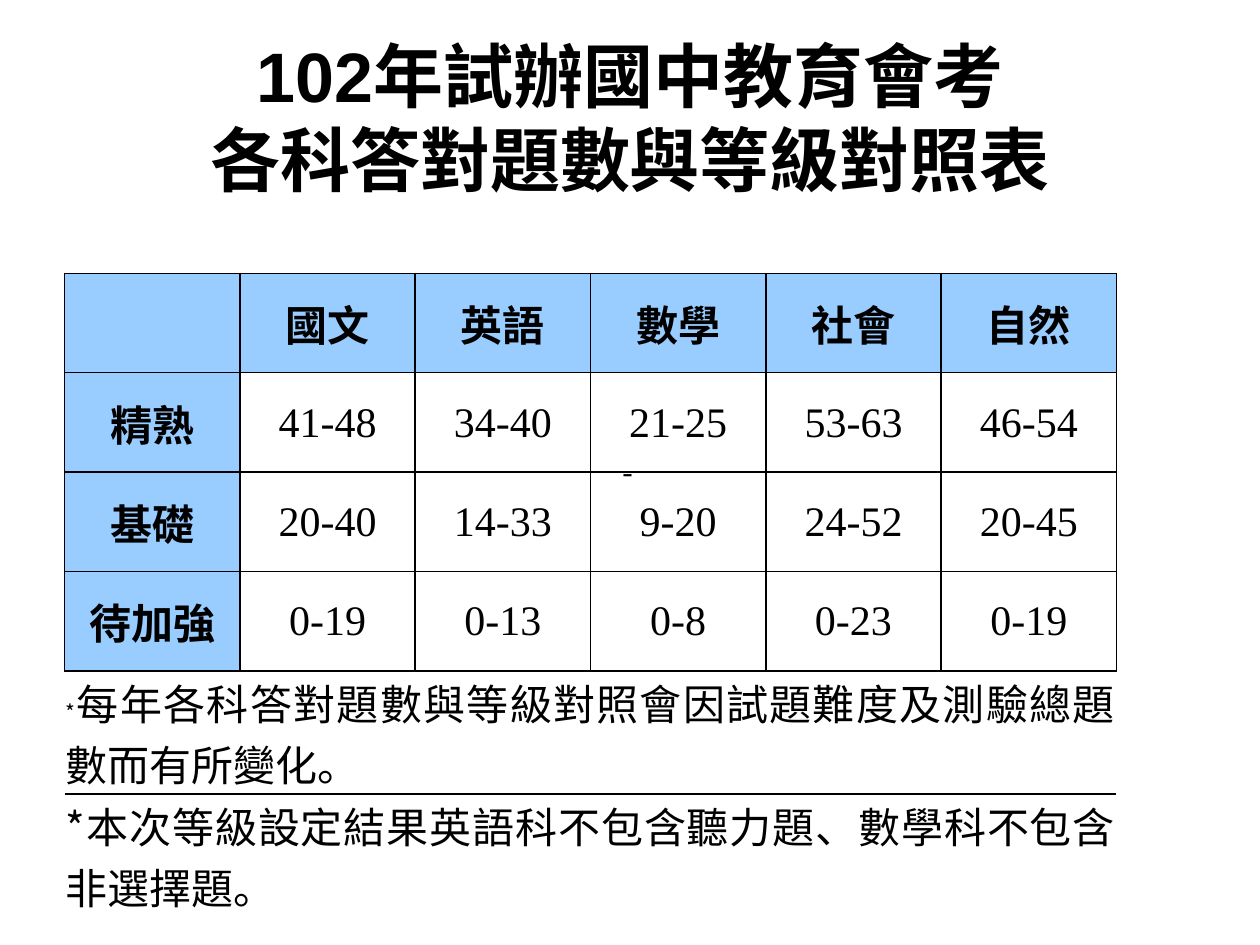
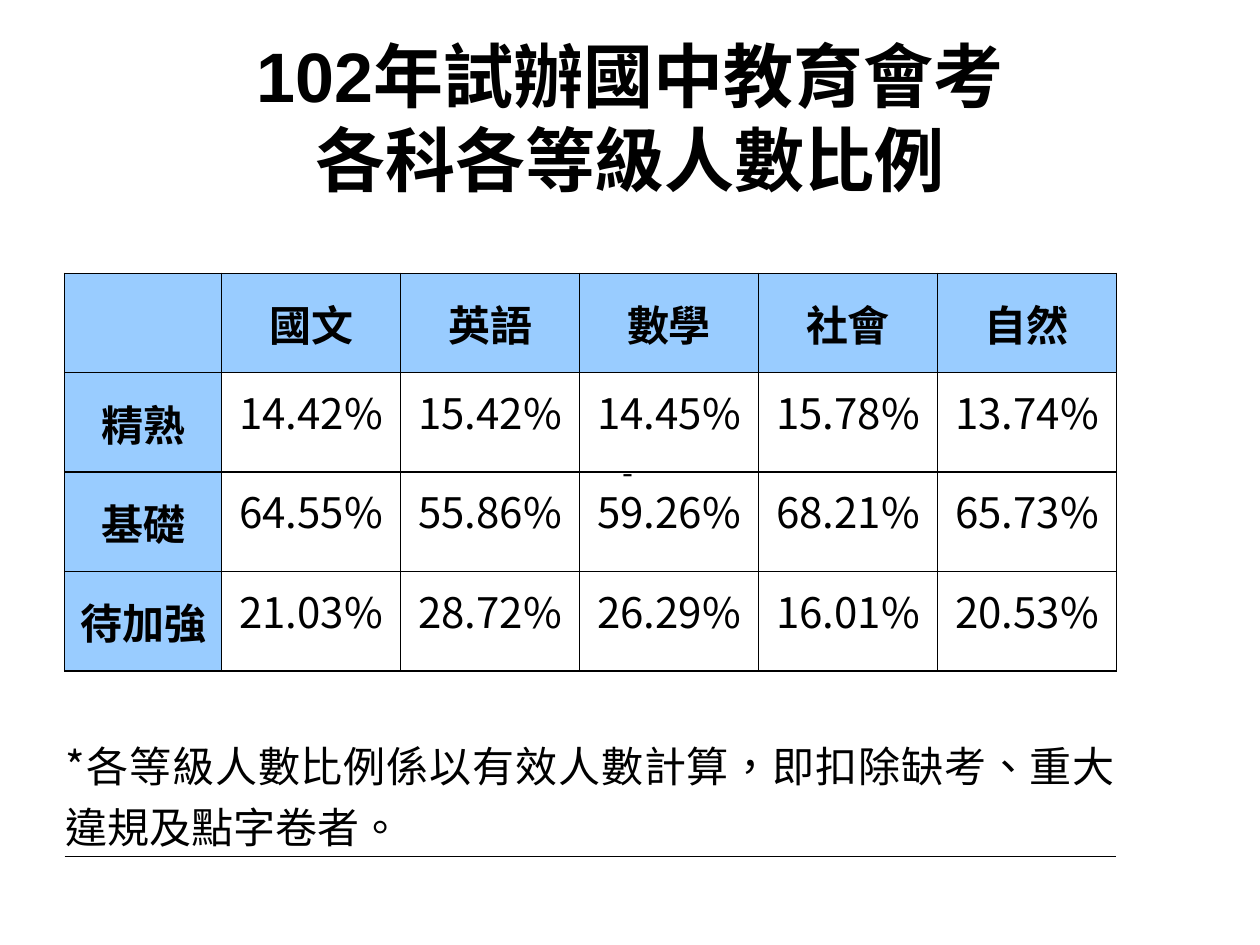
"""Builds two slides with the grade tables of the 102 trial exam."""
from dataclasses import dataclass

from lxml.etree import SubElement
from pptx import Presentation
from pptx.dml.color import RGBColor
from pptx.enum.lang import MSO_LANGUAGE_ID
from pptx.enum.text import MSO_ANCHOR, MSO_AUTO_SIZE, PP_ALIGN
from pptx.oxml.ns import qn
from pptx.util import Pt


@dataclass(frozen=True)
class Theme:
    ink: RGBColor = RGBColor(0x00, 0x00, 0x00)
    paper: RGBColor = RGBColor(0xFF, 0xFF, 0xFF)
    header: RGBColor = RGBColor(0x99, 0xCC, 0xFF)
    title_font: str = "Arial"
    text_font: str = "Noto Sans CJK SC"
    number_font: str = "Times New Roman"
    title_size: int = 40
    table_size: int = 24
    dash_size: int = 18
    star_size: int = 12
    border: int = 1
    plain_table: str = "{2D5ABB26-0587-4C30-8999-92F81FD0307C}"


SUBJECTS = ["", "國文", "英語", "數學", "社會", "自然"]
LEVELS = ["精熟", "基礎", "待加強"]
TITLE_START = "102年試辦國中教育會考"
TRADITIONAL = MSO_LANGUAGE_ID.TRADITIONAL_CHINESE
SIMPLIFIED = MSO_LANGUAGE_ID.SIMPLIFIED_CHINESE
BAND_HEIGHT = 28
GRID_HEIGHT = 56.8


class SlideBuilder:
    def __init__(self, deck, theme):
        self.deck = deck
        self.theme = theme
        self.page = None

    def new_page(self):
        self.page = self.deck.slides.add_slide(self.deck.slide_layouts[5])
        self.page.background.fill.solid()
        self.page.background.fill.fore_color.rgb = self.theme.paper

    def add_span(self, para, text, size, font, bold=False, language=TRADITIONAL):
        span = para.add_run()
        span.text = text
        span.font.size = Pt(size)
        span.font.bold = bold
        span.font.color.rgb = self.theme.ink
        span.font.language_id = language
        span.font.name = font
        SubElement(span.font._element, qn("a:ea")).set("typeface", font)

    def add_title(self, subtitle):
        title = self.page.shapes.title
        title.left, title.top, title.width, title.height = Pt(36), Pt(21.6), Pt(648), Pt(90)
        frame = title.text_frame
        frame.word_wrap = True
        frame.auto_size = MSO_AUTO_SIZE.NONE
        frame.vertical_anchor = MSO_ANCHOR.MIDDLE
        para = frame.paragraphs[0]
        para.alignment = PP_ALIGN.CENTER
        style = (self.theme.title_size, self.theme.title_font, True)
        self.add_span(para, TITLE_START, *style)
        para.add_line_break()
        self.add_span(para, subtitle, *style)

    def set_borders(self, cell, sides):
        properties = cell._tc.get_or_add_tcPr()
        for side in sides:
            line = SubElement(properties, qn(f"a:ln{side}"), w=str(Pt(self.theme.border)))
            fill = SubElement(line, qn("a:solidFill"))
            SubElement(fill, qn("a:srgbClr"), val=str(self.theme.ink))

    def set_margins(self, cell, side, top):
        cell.vertical_anchor = MSO_ANCHOR.MIDDLE
        cell.margin_left = cell.margin_right = Pt(side)
        cell.margin_top, cell.margin_bottom = Pt(top), 0

    def add_table(self, column_widths, note_heights, values, number_font, line_spacing=None):
        heights = [BAND_HEIGHT] + [GRID_HEIGHT] * 4 + note_heights
        frame = self.page.shapes.add_table(
            len(heights), len(column_widths), Pt(36.9), Pt(128.2),
            Pt(sum(column_widths)), Pt(sum(heights)))
        table = frame.table
        table.first_row = table.horz_banding = False
        table._tbl.tblPr.find(qn("a:tableStyleId")).text = self.theme.plain_table
        for column, width in zip(table.columns, column_widths):
            column.width = Pt(width)
        for row, height in zip(table.rows, heights):
            row.height = Pt(height)
        grid = [SUBJECTS] + [[level, *row] for level, row in zip(LEVELS, values)]
        for row_index, texts in enumerate(grid, start=1):
            for column_index, text in enumerate(texts):
                is_header = row_index == 1 or column_index == 0
                self.fill_cell(table.cell(row_index, column_index), text, is_header,
                               number_font, line_spacing)
        for row_index, sides in ((0, "B"), (5, "T"), (6, "")):
            for cell in table.rows[row_index].cells:
                self.set_borders(cell, sides)
                self.set_margins(cell, 0.72, 0.72)
                cell.fill.background()
            table.cell(row_index, 0).merge(table.cell(row_index, len(column_widths) - 1))
        return table

    def fill_cell(self, cell, text, is_header, number_font, line_spacing):
        self.set_borders(cell, "LRTB")
        self.set_margins(cell, 0.72, 0.72)
        if is_header:
            cell.fill.solid()
            cell.fill.fore_color.rgb = self.theme.header
        else:
            cell.fill.background()
        para = cell.text_frame.paragraphs[0]
        para.alignment = PP_ALIGN.CENTER
        if line_spacing and not is_header:
            self.set_margins(cell, 1.44, 0)
            para.line_spacing = Pt(line_spacing)
        if text:
            font = self.theme.text_font if is_header else number_font
            self.add_span(para, text, self.theme.table_size, font, is_header)

    def add_note(self, cell, pieces, language, top=0.72):
        self.set_margins(cell, 0.72, top)
        para = cell.text_frame.paragraphs[0]
        para.alignment = PP_ALIGN.JUSTIFY
        for text, size in pieces:
            self.add_span(para, text, size, self.theme.text_font, language=language)

    def add_dash(self):
        box = self.page.shapes.add_textbox(Pt(348.5), Pt(255.6), Pt(23.8), Pt(28.8))
        box.text_frame.word_wrap = False
        self.add_span(box.text_frame.paragraphs[0], "-", self.theme.dash_size,
                      self.theme.text_font)


def build_score_page(builder):
    theme = builder.theme
    builder.new_page()
    builder.add_title("各科答對題數與等級對照表")
    values = [
        ["41-48", "34-40", "21-25", "53-63", "46-54"],
        ["20-40", "14-33", "9-20", "24-52", "20-45"],
        ["0-19", "0-13", "0-8", "0-23", "0-19"],
    ]
    table = builder.add_table([100.2] * 6, [70, 70], values, theme.number_font)
    builder.add_note(table.cell(5, 0), [
        ("*", theme.star_size),
        ("每年各科答對題數與等級對照會因試題難度及測驗總題數而有所變化。", theme.table_size),
    ], SIMPLIFIED)
    builder.add_note(table.cell(6, 0), [
        ("*本次等級設定結果英語科不包含聽力題、數學科不包含非選擇題。", theme.table_size),
    ], SIMPLIFIED)
    builder.add_dash()


def build_share_page(builder):
    theme = builder.theme
    builder.new_page()
    builder.add_title("各科各等級人數比例")
    values = [
        ["14.42%", "15.42%", "14.45%", "15.78%", "13.74%"],
        ["64.55%", "55.86%", "59.26%", "68.21%", "65.73%"],
        ["21.03%", "28.72%", "26.29%", "16.01%", "20.53%"],
    ]
    table = builder.add_table([89.7] + [102.3] * 5, [106, 39], values, theme.text_font,
                              line_spacing=22)
    builder.add_note(table.cell(5, 0), [
        ("*各等級人數比例係以有效人數計算，即扣除缺考、重大違規及點字卷者。", theme.table_size),
    ], TRADITIONAL, top=35.5)
    builder.add_dash()


def main():
    deck = Presentation()
    deck.slide_width, deck.slide_height = Pt(720), Pt(540)
    builder = SlideBuilder(deck, Theme())
    build_score_page(builder)
    build_share_page(builder)
    deck.save("out.pptx")


if __name__ == "__main__":
    main()
